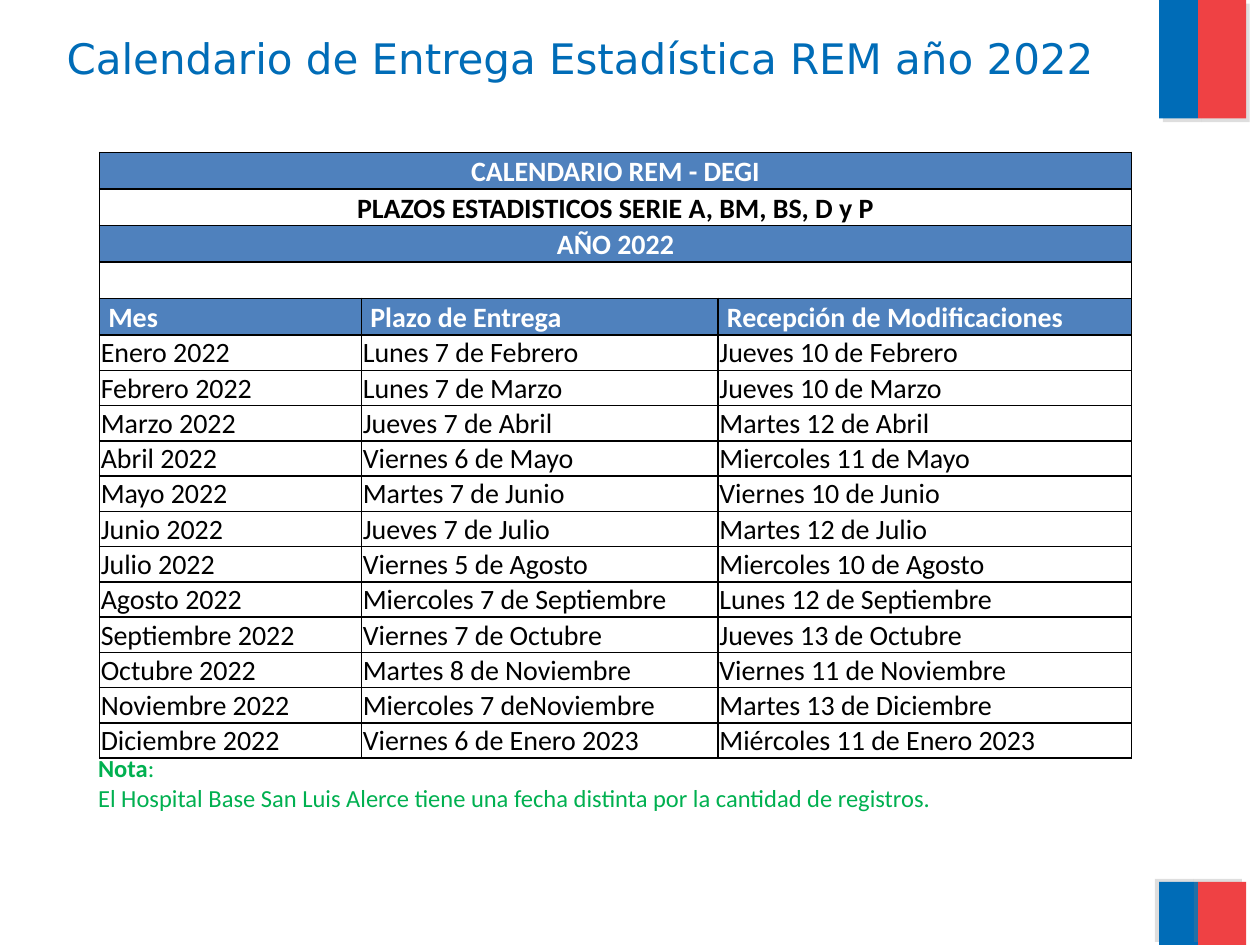
import dataclasses

import pptx
import pptx.dml.color
import pptx.enum.shapes
import pptx.enum.text
import pptx.oxml
import pptx.oxml.ns
import pptx.util
from pptx.util import Inches, Pt

ANCHOR = pptx.enum.text.MSO_ANCHOR
ALIGN = pptx.enum.text.PP_ALIGN


@dataclasses.dataclass(frozen=True)
class Theme:
    blue: str = "006CB7"
    red: str = "EF4144"
    header: str = "4F81BD"
    green: str = "00B050"
    white: str = "FFFFFF"
    black: str = "000000"
    shadow: str = "808080"
    title_font: str = "DejaVu Sans"
    body_font: str = "Calibri"
    title_size: int = 24
    table_size: int = 16
    note_size: int = 14


THEME = Theme()

BANNERS = [
    ("CALENDARIO REM - DEGI", THEME.header, THEME.white),
    ("PLAZOS ESTADISTICOS SERIE A, BM, BS, D y P", THEME.white, THEME.black),
    ("AÑO 2022", THEME.header, THEME.white),
    ("", THEME.white, THEME.black),
]
HEADINGS = ["Mes", "Plazo de Entrega", "Recepción de Modificaciones"]
DEADLINES = [
    ("Enero 2022", "Lunes 7 de Febrero", "Jueves 10 de Febrero"),
    ("Febrero 2022", "Lunes 7 de Marzo", "Jueves 10 de Marzo"),
    ("Marzo 2022", "Jueves 7 de Abril", "Martes 12 de Abril"),
    ("Abril 2022", "Viernes 6 de Mayo", "Miercoles 11 de Mayo"),
    ("Mayo 2022", "Martes 7 de Junio", "Viernes 10 de Junio"),
    ("Junio 2022", "Jueves 7 de Julio", "Martes 12 de Julio"),
    ("Julio 2022", "Viernes 5 de Agosto", "Miercoles 10 de Agosto"),
    ("Agosto 2022", "Miercoles 7 de Septiembre", "Lunes 12 de Septiembre"),
    ("Septiembre 2022", "Viernes 7 de Octubre", "Jueves 13 de Octubre"),
    ("Octubre 2022", "Martes 8 de Noviembre", "Viernes 11 de Noviembre"),
    ("Noviembre 2022", "Miercoles 7 deNoviembre", "Martes 13 de Diciembre"),
    ("Diciembre 2022", "Viernes 6 de Enero 2023", "Miércoles 11 de Enero 2023"),
]


def rgb(value):
    return pptx.dml.color.RGBColor.from_string(value)


def xml(text):
    """Parse a DrawingML element written with the a: prefix."""
    name, rest = text[1:].split(" ", 1)
    return pptx.oxml.parse_xml(f"<{name} {pptx.oxml.ns.nsdecls('a')} {rest}")


def format_run(run, font, size, color, bold=False):
    run.font.name = font
    run.font.size = Pt(size)
    run.font.color.rgb = rgb(color)
    run.font.bold = bold


def add_color_bars(slide, left, top, height, shadow_angle):
    """Blue and red bars side by side, with a hard shadow at the given angle."""
    blue_width, red_width = Inches(0.31), Inches(0.38)
    bars = [(left, blue_width, THEME.blue), (left + blue_width, red_width, THEME.red)]
    for bar_left, width, color in bars:
        bar = slide.shapes.add_shape(
            pptx.enum.shapes.MSO_SHAPE.RECTANGLE, bar_left, top, width, height)
        bar.fill.solid()
        bar.fill.fore_color.rgb = rgb(color)
        bar.line.fill.background()
        bar.shadow.inherit = False
        effects = bar._element.spPr.find(pptx.oxml.ns.qn("a:effectLst"))
        effects.append(xml(
            f'<a:outerShdw dist="{Pt(3)}" dir="{shadow_angle * 60000}" algn="ctr" '
            f'rotWithShape="0"><a:srgbClr val="{THEME.shadow}">'
            '<a:alpha val="25000"/></a:srgbClr></a:outerShdw>'))


def add_text_frame(slide, left, top, width, height):
    text_frame = slide.shapes.add_textbox(left, top, width, height).text_frame
    text_frame.word_wrap = True
    return text_frame


def add_title(slide, left, top, width, height):
    text_frame = add_text_frame(slide, left, top, width, height)
    text_frame.text = "Calendario de Entrega Estadística REM año 2022"
    format_run(text_frame.paragraphs[0].runs[0],
               THEME.title_font, THEME.title_size, THEME.blue)


def add_note(slide, left, top, width, height):
    text_frame = add_text_frame(slide, left, top, width, height)
    label = text_frame.paragraphs[0]
    label.add_run().text = "Nota"
    label.add_run().text = ":"
    message = text_frame.add_paragraph()
    message.text = ("El Hospital Base San Luis Alerce tiene una fecha distinta "
                    "por la cantidad de registros.")
    for run in (*label.runs, *message.runs):
        format_run(run, THEME.body_font, THEME.note_size, THEME.green)
    label.runs[0].font.bold = True


def add_borders(cell):
    properties = cell._tc.get_or_add_tcPr()
    for index, side in enumerate(("lnL", "lnR", "lnT", "lnB")):
        properties.insert(index, xml(
            f'<a:{side} w="{Pt(1)}"><a:solidFill><a:srgbClr val="{THEME.black}"/>'
            f'</a:solidFill></a:{side}>'))


def fill_cell(cell, text, fill, color, bold, align=ALIGN.LEFT):
    """Bold cells are headings: centred vertically, with wider side margins."""
    cell.fill.solid()
    cell.fill.fore_color.rgb = rgb(fill)
    cell.vertical_anchor = ANCHOR.MIDDLE if bold else ANCHOR.BOTTOM
    cell.margin_left = cell.margin_right = Inches(0.07 if bold else 0.01)
    cell.margin_top = Inches(0 if bold else 0.01)
    cell.margin_bottom = 0
    cell.text_frame.text = text
    paragraph = cell.text_frame.paragraphs[0]
    paragraph.alignment = align
    if bold:
        paragraph.line_spacing = 1.07
    for run in paragraph.runs:
        format_run(run, THEME.body_font, THEME.table_size, color, bold)
    if not text:
        paragraph._p.append(xml(f'<a:endParaRPr sz="{THEME.table_size * 100}"/>'))


def add_calendar(slide, left, top, width):
    column_shares = (2.08, 2.83, 3.28)
    heading_row = len(BANNERS)
    heights = ([Inches(0.29)] * (heading_row + 1)
               + [Inches(0.28)] * len(DEADLINES))
    table = slide.shapes.add_table(len(heights), len(column_shares), left, top,
                                   width, sum(heights)).table
    table.first_row = table.horz_banding = False
    for column, share in zip(table.columns, column_shares):
        column.width = int(width * share / sum(column_shares))
    for row, height in zip(table.rows, heights):
        row.height = height

    for row, (text, fill, color) in enumerate(BANNERS):
        table.cell(row, 0).merge(table.cell(row, len(column_shares) - 1))
        fill_cell(table.cell(row, 0), text, fill, color, True, ALIGN.CENTER)
    for column, text in enumerate(HEADINGS):
        fill_cell(table.cell(heading_row, column), text,
                  THEME.header, THEME.white, True)
    for row, deadline in enumerate(DEADLINES, heading_row + 1):
        for column, text in enumerate(deadline):
            fill_cell(table.cell(row, column), text,
                      THEME.white, THEME.black, False)
    for cell in table.iter_cells():
        add_borders(cell)


def main():
    presentation = pptx.Presentation()
    presentation.slide_width = Inches(10)
    presentation.slide_height = Inches(7.5)
    slide = presentation.slides.add_slide(presentation.slide_layouts[6])

    add_color_bars(slide, Inches(9.2), Inches(0), Inches(0.94), 45)
    add_color_bars(slide, Inches(9.2), Inches(7), Inches(0.5), 215)
    add_title(slide, Inches(0.43), Inches(0.21), Inches(8.74), Inches(1.15))
    add_calendar(slide, Inches(0.79), Inches(1.21), Inches(8.19))
    add_note(slide, Inches(0.68), Inches(5.93), Inches(8.21), Inches(0.57))
    presentation.save("out.pptx")


if __name__ == "__main__":
    main()
